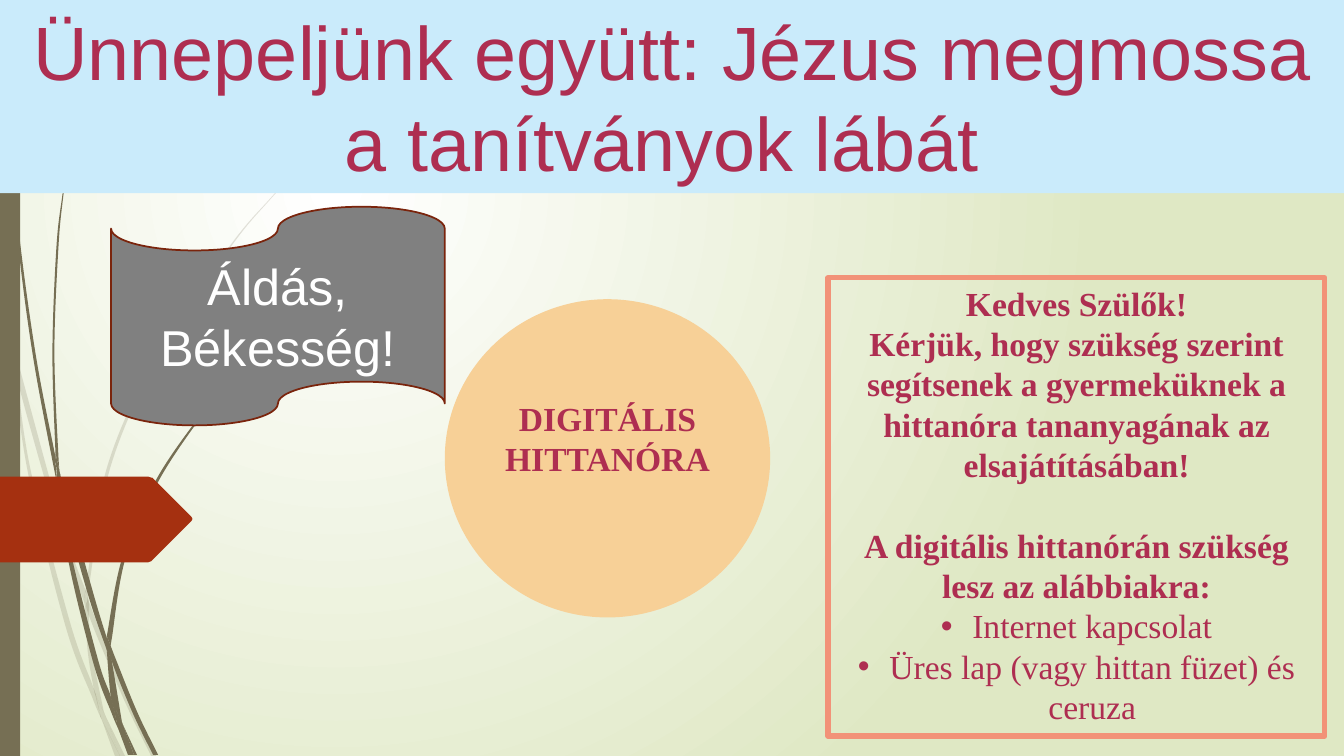
from lxml import etree
from pptx import Presentation
from pptx.dml.color import RGBColor
from pptx.enum.shapes import MSO_SHAPE
from pptx.enum.text import MSO_ANCHOR, PP_ALIGN
from pptx.oxml.ns import qn
from pptx.util import Cm, Pt

RECTANGLE, OVAL = MSO_SHAPE.RECTANGLE, MSO_SHAPE.OVAL
TAPE = MSO_SHAPE.FLOWCHART_PUNCHED_TAPE
TOP, MIDDLE = MSO_ANCHOR.TOP, MSO_ANCHOR.MIDDLE
CENTER = PP_ALIGN.CENTER

COLORS = {
    "white": "FFFFFF", "meadow": "DFE8C4", "stem": "766F54", "arrow": "A53010",
    "sky": "CAEBFB", "berry": "AE2E51", "peach": "F7D097", "coral": "F29278",
    "tape": "808080", "tape_edge": "7A240C",
}
WIDTH, HEIGHT = 33.87, 19.05
LINE_PITCH = 1.2
GRID = Cm(0.0254)

FAINT_STEMS = [
    ([(11, 350), (9, 322), (0, 282)], [(0, 299), (10, 344)]),
    ([(14, 345), (17, 376), (58, 522), (84, 599)], [(85, 586), (62, 520), (14, 345)]),
    ([(88, 596), (88, 610), (123, 694), (150, 750)], [(155, 750), (127, 692), (92, 607)]),
    ([(105, 711), (119, 750)], [(124, 750), (105, 711)]),
    ([(11, 350), (28, 470), (65, 621), (92, 693), (101, 714)],
     [(99, 707), (93, 683), (70, 619), (31, 469), (17, 376)]),
    ([(84, 599), (87, 646), (93, 683), (96, 692), (105, 711)],
     [(103, 706), (91, 646), (88, 608)]),
    ([(88, 596), (88, 584), (110, 462), (160, 349), (229, 245), (268, 198), (290, 175), (312, 154)],
     [(312, 153), (289, 175), (268, 197), (228, 244), (158, 348), (107, 461), (85, 584), (85, 586)]),
    ([(101, 714), (114, 750)], [(119, 750), (101, 714)]),
    ([(88, 610), (88, 596), (85, 586)], [(84, 599), (88, 608)]),
    ([(93, 683), (99, 707), (101, 714), (119, 750)], [(105, 711), (96, 692)]),
]
DARK_STEMS = [
    ([(3, 0), (4, 48), (7, 110), (17, 233), (33, 355), (56, 477), (57, 481)],
     [(55, 457), (55, 453), (36, 355), (19, 232), (8, 109), (5, 48), (4, 0)]),
    ([(60, 472), (64, 505), (88, 592), (106, 645)], [(106, 633), (93, 590), (60, 472)]),
    ([(110, 641), (111, 656), (132, 708), (152, 749)], [(157, 749), (136, 706), (113, 649)]),
    ([(57, 477), (68, 557), (93, 659), (111, 708), (117, 722)],
     [(116, 717), (110, 691), (98, 657), (72, 556), (64, 505)]),
    ([(60, 472), (58, 453), (54, 349), (58, 245), (63, 193), (70, 141)],
     [(70, 141), (62, 193), (56, 245), (52, 349), (55, 449)]),
    ([(122, 719), (133, 749)], [(136, 749), (122, 719)]),
    ([(55, 449), (55, 453), (57, 477)], [(64, 505), (60, 472)]),
    ([(110, 641), (111, 633), (125, 552), (158, 476), (205, 406), (231, 374), (245, 359), (261, 344)],
     [(260, 344), (245, 358), (231, 373), (204, 405), (156, 474), (122, 551), (106, 631)]),
    ([(117, 722), (127, 749)], [(131, 749), (117, 722)]),
    ([(106, 645), (110, 691), (116, 706), (122, 719)], [(121, 716), (111, 656), (109, 651)]),
    ([(106, 631), (106, 645), (109, 651)], [(111, 656), (110, 641)]),
    ([(110, 691), (116, 717), (117, 722), (130, 749)],
     [(133, 749), (122, 719), (116, 706)]),
]
ARROW_OUTLINE = [(0, 0), (147, 0), (150, 1), (151, 1), (190, 40), (191, 42),
                 (190, 44), (151, 83), (150, 84), (147, 85), (0, 85)]


def rgb(name):
    return RGBColor.from_string(COLORS[name])


def lengths(box):
    return [Cm(value) for value in box]


def curve_handles(points):
    padded = [points[0], *points, points[-1]]
    handles = []
    for a, b, c, d in zip(padded, padded[1:], padded[2:], padded[3:]):
        handles.append(tuple(q + (r - p) / 6 for p, q, r in zip(a, b, c)))
        handles.append(tuple(r - (s - q) / 6 for q, r, s in zip(b, c, d)))
        handles.append(c)
    return handles


def add_outline(shapes, box, points, color):
    vertices = [(x * GRID, y * GRID) for x, y in points]
    builder = shapes.build_freeform(*vertices[0])
    builder.add_line_segments(vertices[1:], close=True)
    outline = builder.convert_to_shape(*lengths(box[:2]))
    outline.shadow.inherit = False
    outline.fill.solid()
    outline.fill.fore_color.rgb = rgb(color)
    outline.line.fill.background()
    return outline


def bend(outline):
    segments = list(outline._element.iter(qn("a:lnTo")))
    for triple in zip(segments[::3], segments[1::3], segments[2::3]):
        curve = etree.Element(qn("a:cubicBezTo"))
        triple[0].addprevious(curve)
        for segment in triple:
            curve.append(segment[0])
            segment.getparent().remove(segment)


def add_panel(slide, box, kind, fill=None, edge=None, edge_width=0, anchor=TOP):
    panel = slide.shapes.add_shape(kind, *lengths(box))
    panel.shadow.inherit = False
    if fill:
        panel.fill.solid()
        panel.fill.fore_color.rgb = rgb(fill)
    else:
        panel.fill.background()
    if edge:
        panel.line.color.rgb = rgb(edge)
        panel.line.width = Pt(edge_width)
    else:
        panel.line.fill.background()
    panel.text_frame.word_wrap = True
    panel.text_frame.vertical_anchor = anchor
    return panel


def write(frame, text, size, font, color, bold=False):
    frame.text = text
    for paragraph in frame.paragraphs:
        paragraph.alignment = CENTER
        paragraph.line_spacing = Pt(LINE_PITCH * size)
        for run in paragraph.runs:
            run.font.size = Pt(size)
            run.font.name = font
            run.font.bold = bold
            run.font.color.rgb = rgb(color)


def add_bullet(paragraph):
    properties = paragraph._p.get_or_add_pPr()
    properties.set("marL", str(Cm(0.79)))
    properties.set("indent", str(Cm(-0.79)))
    etree.SubElement(properties, qn("a:buFont")).set("typeface", "Arial")
    etree.SubElement(properties, qn("a:buChar")).set("char", "•")


def paint_background(slide):
    fill = slide.background.fill
    fill.gradient()
    for stop, color, position in zip(fill.gradient_stops, ("white", "meadow"), (0, 1)):
        stop.color.rgb = rgb(color)
        stop.position = position
    gradient = next(slide._element.iter(qn("a:gradFill")))
    gradient.remove(gradient.find(qn("a:lin")))
    glow = etree.SubElement(gradient, qn("a:path"))
    glow.set("path", "circle")
    focus = etree.SubElement(glow, qn("a:fillToRect"))
    for side, share in zip("ltrb", (50000, 50000, 100000, 100000)):
        focus.set(side, str(share))


def draw_stems(slide, box, stems, opacity=100):
    group = slide.shapes.add_group_shape()
    for rising, returning in stems:
        turn = [rising[-1], returning[0], returning[0]]
        points = [rising[0], *curve_handles(rising), *turn, *curve_handles(returning)]
        stem = add_outline(group.shapes, box, points, "stem")
        bend(stem)
        if opacity < 100:
            tint = next(stem._element.spPr.iter(qn("a:srgbClr")))
            etree.SubElement(tint, qn("a:alpha")).set("val", str(opacity * 1000))


def draw_margin(slide, box):
    left, top, width, height = box
    draw_stems(slide, box, FAINT_STEMS, opacity=20)
    draw_stems(slide, box, DARK_STEMS)
    add_panel(slide, (left, top, 0.51, height), RECTANGLE, "stem")
    add_outline(slide.shapes, (left, top + 12.01), ARROW_OUTLINE, "arrow")


def draw_title(slide, box):
    banner = add_panel(slide, box, RECTANGLE, "sky")
    write(banner.text_frame, "Ünnepeljünk együtt: Jézus megmossa\na tanítványok lábát ",
          54, "Arial", "berry")


def draw_lesson(slide, box):
    lesson = add_panel(slide, box, OVAL, "peach", anchor=MIDDLE)
    lesson.text_frame.margin_bottom = Cm(1.15)
    write(lesson.text_frame, "DIGITÁLIS HITTANÓRA", 24, "Times New Roman", "berry", bold=True)


def draw_parents_note(slide, box):
    note = add_panel(slide, box, RECTANGLE, edge="coral", edge_width=3.75).text_frame
    write(note, "Kedves Szülők!\n"
          "Kérjük, hogy szükség szerint segítsenek a gyermeküknek a hittanóra "
          "tananyagának az elsajátításában!\n"
          "A digitális hittanórán szükség\n"
          "lesz az alábbiakra:\n"
          "Internet kapcsolat\n"
          "Üres lap (vagy hittan füzet) és ceruza",
          24, "Times New Roman", "berry", bold=True)
    note.paragraphs[2].space_before = Pt(LINE_PITCH * 24)
    for supply in note.paragraphs[4:]:
        add_bullet(supply)
        supply.runs[0].font.bold = False


def draw_greeting(slide, box):
    greeting = add_panel(slide, box, TAPE, "tape", "tape_edge", 1.25, MIDDLE)
    write(greeting.text_frame, "Áldás, Békesség!", 36, "Arial", "white")


def main():
    deck = Presentation()
    deck.slide_width, deck.slide_height = Cm(WIDTH), Cm(HEIGHT)
    slide = deck.slides.add_slide(deck.slide_layouts[6])
    paint_background(slide)
    draw_margin(slide, (0, 0, WIDTH, HEIGHT))
    draw_title(slide, (0, 0, WIDTH, 4.87))
    draw_lesson(slide, (11.21, 7.54, 8.2, 8.02))
    draw_parents_note(slide, (20.87, 7, 12.52, 11.55))
    draw_greeting(slide, (2.8, 5.21, 8.41, 5.51))
    deck.save("out.pptx")


if __name__ == "__main__":
    main()
